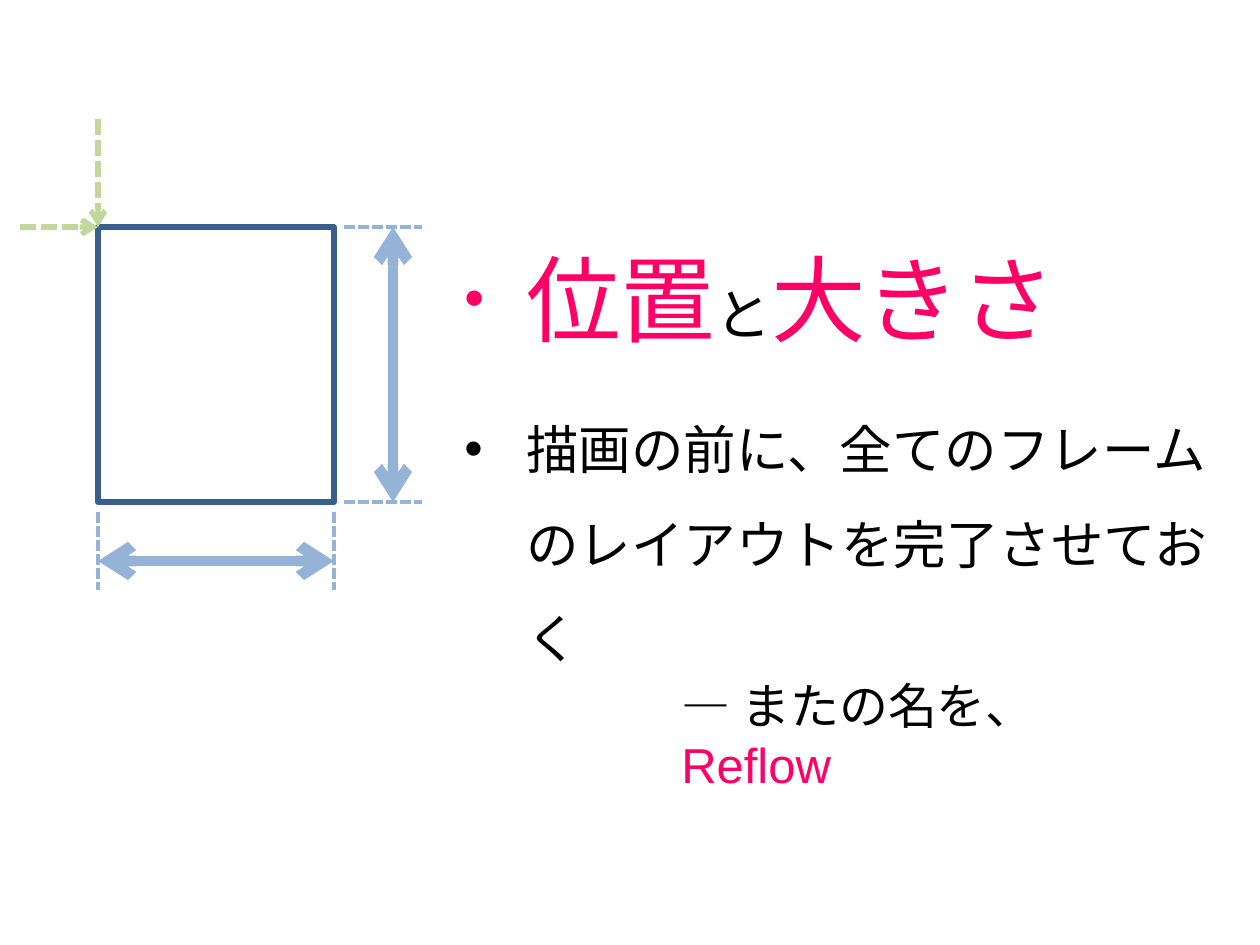
from dataclasses import dataclass

from lxml import etree
from pptx import Presentation
from pptx.dml.color import RGBColor
from pptx.enum import dml, lang, shapes, text
from pptx.oxml import ns
from pptx.util import Emu, Pt

PX_PER_INCH = 126
SLIDE_W, SLIDE_H = 1260, 945


@dataclass(frozen=True)
class Theme:
    ink: str = "000000"
    accent: str = "FF0066"
    frame: str = "3A5F8C"
    size: str = "95B3D7"
    position: str = "C3D69B"
    body_font: str = "Noto Sans CJK JP"
    caption_font: str = "Arial"
    keyword_pt: int = 54
    joiner_pt: int = 32
    body_pt: int = 30
    caption_pt: int = 28
    frame_pt: float = 3
    arrow_pt: float = 6.25
    guide_pt: float = 2


THEME = Theme()


def px(length):
    return Emu(round(length * 914400 / PX_PER_INCH))


def add_line(slide, start, end, color, width, dashed=False, ends=()):
    line = slide.shapes.add_connector(
        shapes.MSO_CONNECTOR.STRAIGHT, *map(px, (*start, *end)))
    line.line.color.rgb = RGBColor.from_string(color)
    line.line.width = Pt(width)
    if dashed:
        line.line.dash_style = dml.MSO_LINE.SQUARE_DOT
    # Arrowheads, then an empty effect list against the theme shadow
    outline = line.line._get_or_add_ln()
    for end_name in ends:
        etree.SubElement(outline, ns.qn(f"a:{end_name}"), type="arrow")
    etree.SubElement(line._element.spPr, ns.qn("a:effectLst"))


def add_text_box(slide, box):
    frame = slide.shapes.add_textbox(*map(px, box)).text_frame
    frame.word_wrap = True
    frame.auto_size = text.MSO_AUTO_SIZE.SHAPE_TO_FIT_TEXT
    return frame


def add_runs(paragraph, font_name, runs):
    paragraph.font.name = font_name
    for wording, size, color in runs:
        run = paragraph.add_run()
        run.text = wording
        run.font.name = font_name
        run.font.size = Pt(size)
        run.font.color.rgb = RGBColor.from_string(color)
        run.font.language_id = lang.MSO_LANGUAGE_ID.JAPANESE


def set_bullet(paragraph, indent, percent=100):
    properties = paragraph._p.get_or_add_pPr()
    properties.set("marL", str(px(indent)))
    properties.set("indent", str(-px(indent)))
    etree.SubElement(properties, ns.qn("a:buSzPct"), val=str(percent * 1000))
    etree.SubElement(properties, ns.qn("a:buFont"), typeface="Arial")
    etree.SubElement(properties, ns.qn("a:buChar"), char="•")


def add_points(slide, box):
    frame = add_text_box(slide, box)
    points = [
        (60, 0, [("位置", THEME.keyword_pt, THEME.accent),
                 ("と", THEME.joiner_pt, THEME.ink),
                 ("大きさ", THEME.keyword_pt, THEME.accent)]),
        (100, 18, [("描画の前に、全てのフレームのレイアウトを完了させておく",
                    THEME.body_pt, THEME.ink)]),
    ]
    for index, (bullet_percent, space_before, runs) in enumerate(points):
        point = frame.add_paragraph() if index else frame.paragraphs[0]
        point.line_spacing = 1.5
        point.space_before = Pt(space_before)
        set_bullet(point, 62, bullet_percent)
        add_runs(point, THEME.body_font, runs)


def add_frame_diagram(slide, box):
    left, top, width, height = box
    right, bottom = left + width, top + height
    gap, guide = 10, 78
    middle = gap + guide // 2 + 10

    # Frame being laid out
    frame = slide.shapes.add_shape(
        shapes.MSO_SHAPE.FLOWCHART_PROCESS, *map(px, box))
    frame.shadow.inherit = False
    frame.fill.background()
    frame.line.color.rgb = RGBColor.from_string(THEME.frame)
    frame.line.width = Pt(THEME.frame_pt)

    # Height and width arrows
    for start, end in (((right + middle, top), (right + middle, bottom)),
                       ((right, bottom + middle), (left, bottom + middle))):
        add_line(slide, start, end, THEME.size, THEME.arrow_pt,
                 ends=("headEnd", "tailEnd"))

    # Position arrows meeting at the top left corner
    for start in ((left - guide, top), (left, top - 108)):
        add_line(slide, start, (left, top), THEME.position, THEME.frame_pt,
                 dashed=True, ends=("tailEnd",))

    # Guides extending the frame edges
    for x in (left, right):
        add_line(slide, (x, bottom + gap), (x, bottom + gap + guide),
                 THEME.size, THEME.guide_pt, dashed=True)
    for y in (top, bottom):
        add_line(slide, (right + gap, y), (right + gap + guide, y),
                 THEME.size, THEME.guide_pt, dashed=True)


def add_caption(slide, box):
    caption = add_text_box(slide, box).paragraphs[0]
    add_runs(caption, THEME.caption_font, [
        ("― またの名を、", THEME.caption_pt, THEME.ink),
        ("Reflow", THEME.caption_pt, THEME.accent)])


def main():
    deck = Presentation()
    deck.slide_width, deck.slide_height = px(SLIDE_W), px(SLIDE_H)
    slide = deck.slides.add_slide(deck.slide_layouts[6])
    add_points(slide, (452, 178, 788, 407))
    add_frame_diagram(slide, (98, 227, 236, 275))
    add_caption(slide, (669, 669, 493, 72))
    deck.save("out.pptx")


if __name__ == "__main__":
    main()
